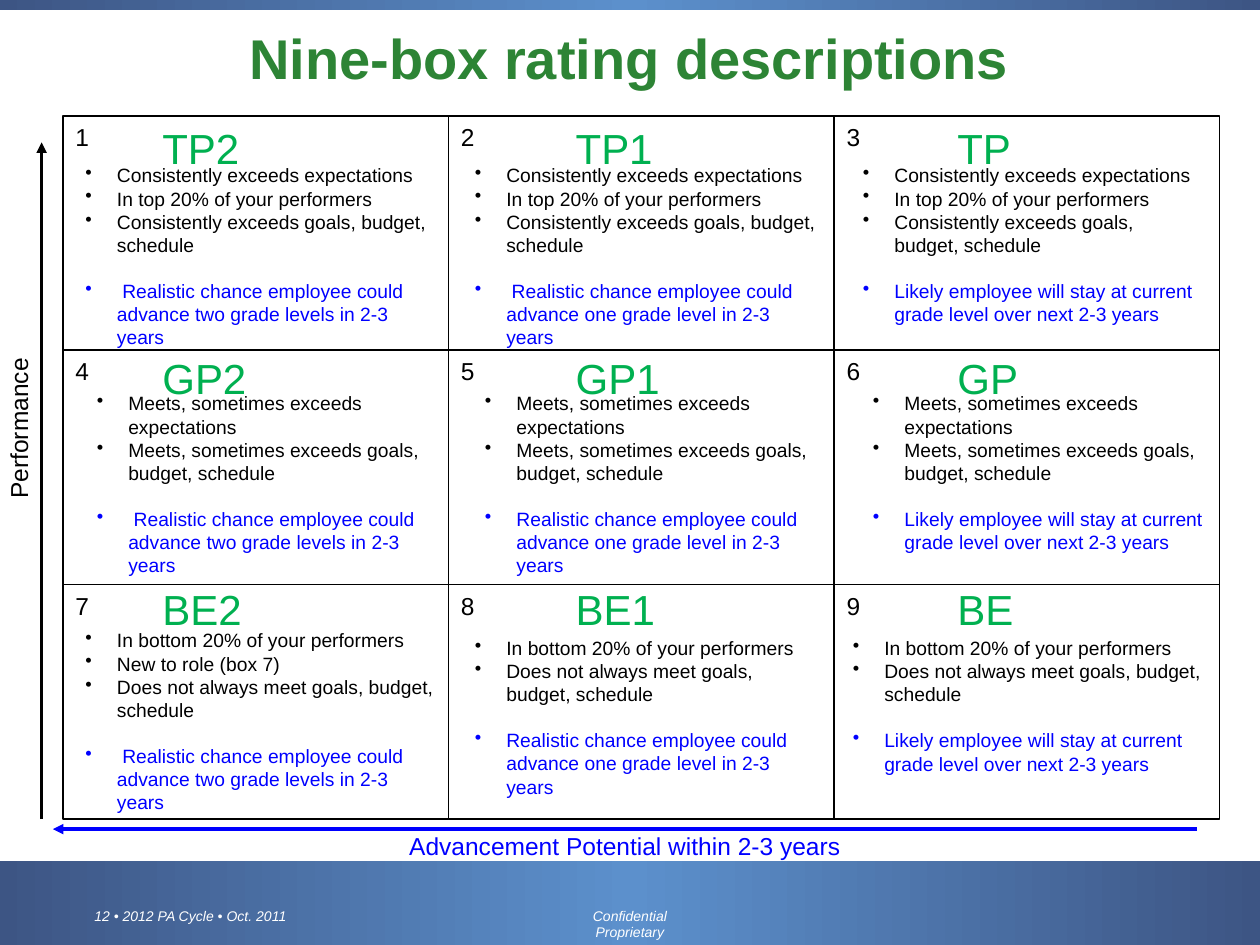
import copy

import pptx
import pptx.dml.color
import pptx.enum.shapes
import pptx.enum.text
import pptx.oxml
import pptx.oxml.ns
import pptx.util

Inches = pptx.util.Inches
Pt = pptx.util.Pt
RGBColor = pptx.dml.color.RGBColor
Align = pptx.enum.text.PP_ALIGN
Anchor = pptx.enum.text.MSO_ANCHOR
qn = pptx.oxml.ns.qn

BLACK = RGBColor(0x00, 0x00, 0x00)
WHITE = RGBColor(0xFF, 0xFF, 0xFF)
BLUE = RGBColor(0x00, 0x00, 0xFF)
GREEN = RGBColor(0x00, 0xB0, 0x50)
TITLE_GREEN = RGBColor(0x2D, 0x84, 0x35)
BAND_DARK = RGBColor(0x3D, 0x55, 0x84)
BAND_LIGHT = RGBColor(0x5C, 0x90, 0xCC)

GRID_LEFT, GRID_TOP = 0.5, 0.92
CELL_WIDTH, CELL_HEIGHT = 3.06, 1.86
CODE_LEFTS = (1.19, 4.47, 7.5)
CODE_TOPS = (0.92, 2.75, 4.58)
CODES = (("TP", 0.63), ("GP", 0.69), ("BE", 0.65))
SUFFIXES = ("2", "1", "")

EXCEEDS = ["Consistently exceeds expectations", "In top 20% of your performers",
           "Consistently exceeds goals, budget, schedule"]
MEETS = ["Meets, sometimes exceeds expectations",
         "Meets, sometimes exceeds goals, budget, schedule"]
BOTTOM = "In bottom 20% of your performers"
GOALS = "Does not always meet goals, budget, schedule"
TWO_LEVELS = " Realistic chance employee could advance two grade levels in 2-3 years"
ONE_LEVEL = "Realistic chance employee could advance one grade level in 2-3 years"
STAY = "Likely employee will stay at current grade level over next 2-3 years"

DESCRIPTIONS = (
    ((0.58, 1.25, 3, 1.58), EXCEEDS, TWO_LEVELS),
    ((3.67, 1.25, 2.92, 1.58), EXCEEDS, " " + ONE_LEVEL),
    ((6.75, 1.25, 2.83, 1.4), EXCEEDS, STAY),
    ((0.67, 3.06, 3, 1.58), MEETS, TWO_LEVELS),
    ((3.75, 3.06, 2.92, 1.58), MEETS, ONE_LEVEL),
    ((6.83, 3.06, 2.83, 1.4), MEETS, STAY),
    ((0.58, 4.94, 3, 1.58), [BOTTOM, "New to role (box 7)", GOALS], TWO_LEVELS),
    ((3.67, 5, 2.92, 1.4), [BOTTOM, GOALS], ONE_LEVEL),
    ((6.67, 5, 3, 1.21), [BOTTOM, GOALS], STAY),
)


def apply_format(target, values):
    for name, value in values.items():
        setattr(target, name, value)


class SlideBuilder:
    def __init__(self, slide, font_name):
        self.slide = slide
        self.font_name = font_name

    def style_font(self, paragraph, size, color, **extra):
        apply_format(paragraph.font, {"name": self.font_name, "size": Pt(size), **extra})
        paragraph.font.color.rgb = color

    def rectangle(self, position):
        shape = self.slide.shapes.add_shape(
            pptx.enum.shapes.MSO_SHAPE.RECTANGLE, *map(Inches, position))
        shape.shadow.inherit = False
        return shape

    def band(self, top, height):
        shape = self.rectangle((0, top, 10, height))
        shape.line.fill.background()
        shape.fill.gradient()
        shape.fill.gradient_angle = 0
        stops = shape._element.spPr.find(qn("a:gradFill")).find(qn("a:gsLst"))
        stops.insert(1, copy.deepcopy(stops[0]))
        colors = (BAND_DARK, BAND_LIGHT, BAND_DARK)
        for index, stop in enumerate(shape.fill.gradient_stops):
            stop.color.rgb = colors[index]
            stop.position = index / 2

    def cell(self, position):
        shape = self.rectangle(position)
        shape.fill.background()
        shape.line.color.rgb = BLACK
        shape.line.width = Pt(1)

    def text(self, content, position, size, color, align=Align.LEFT,
             anchor=Anchor.TOP, wrap=True, rotation=0, **extra):
        shape = self.slide.shapes.add_textbox(*map(Inches, position))
        shape.rotation = rotation
        apply_format(shape.text_frame, {"word_wrap": wrap, "vertical_anchor": anchor})
        paragraph = shape.text_frame.paragraphs[0]
        paragraph.text = content
        paragraph.alignment = align
        self.style_font(paragraph, size, color, **extra)

    def description(self, position, points, outlook):
        shape = self.rectangle(position)
        shape.fill.solid()
        shape.fill.fore_color.rgb = WHITE
        shape.line.fill.background()
        frame = shape.text_frame
        apply_format(frame, {"word_wrap": True, "vertical_anchor": Anchor.TOP})
        for index, content in enumerate([*points, outlook]):
            paragraph = frame.add_paragraph() if index else frame.paragraphs[0]
            paragraph.text = content
            paragraph.alignment = Align.LEFT
            properties = paragraph._p.get_or_add_pPr()
            properties.set("marL", str(Inches(0.25)))
            properties.set("indent", str(-Inches(0.25)))
            if index == len(points):
                paragraph.space_before = Pt(13.2)
            bullet = pptx.oxml.parse_xml(
                '<a:buChar xmlns:a="http://schemas.openxmlformats.org/drawingml/2006/main" char="•"/>')
            properties.append(bullet)
            self.style_font(paragraph, 11, BLUE if index == len(points) else BLACK)

    def arrow(self, start, end, color):
        connector = self.slide.shapes.add_connector(
            pptx.enum.shapes.MSO_CONNECTOR.STRAIGHT, *map(Inches, start + end))
        connector.line.color.rgb = color
        connector.line.width = Pt(2)
        line = connector.line._get_or_add_ln()
        line.append(line.makeelement(qn("a:tailEnd"), {"type": "triangle"}))
        properties = connector._element.spPr
        properties.append(properties.makeelement(qn("a:effectLst"), {}))


def main():
    presentation = pptx.Presentation()
    presentation.slide_width = Inches(10)
    presentation.slide_height = Inches(7.5)
    slide = presentation.slides.add_slide(presentation.slide_layouts[6])
    builder = SlideBuilder(slide, "Arial")

    builder.band(6.83, 0.67)
    builder.text("12 • 2012 PA Cycle • Oct. 2011", (0.65, 7.15, 2.66, 0.23), 8, WHITE, italic=True)
    builder.text("Confidential Proprietary", (4.35, 7.15, 1.3, 0.23), 8, WHITE,
                 Align.CENTER, italic=True)
    builder.band(0, 0.08)
    builder.text("Nine-box rating descriptions", (0.08, 0.08, 9.83, 0.75), 32, TITLE_GREEN,
                 Align.CENTER, Anchor.MIDDLE, bold=True)

    for position, points, outlook in DESCRIPTIONS:
        builder.description(position, points, outlook)

    for index in range(9):
        row, column = divmod(index, 3)
        left = GRID_LEFT + column * CELL_WIDTH
        top = GRID_TOP + row * CELL_HEIGHT
        builder.cell((left, top, CELL_WIDTH, CELL_HEIGHT))
        builder.text(str(index + 1), (left, top, 0.51, 0.35), 14, BLACK)
        code, width = CODES[row]
        suffix = SUFFIXES[column]
        builder.text(code + suffix,
                     (CODE_LEFTS[column], CODE_TOPS[row], width + 0.19 * len(suffix), 0.5),
                     24, GREEN, wrap=False)

    builder.text("Performance", (-0.75, 3.23, 1.8, 0.34), 14, BLACK, Align.CENTER, rotation=270)
    builder.arrow((0.33, 6.5), (0.33, 1.13), BLACK)
    builder.text("Advancement Potential within 2-3 years", (2.42, 6.55, 5.08, 0.34), 14, BLUE,
                 Align.CENTER)
    builder.arrow((9.5, 6.58), (0.42, 6.58), BLUE)

    presentation.save("out.pptx")


if __name__ == "__main__":
    main()
